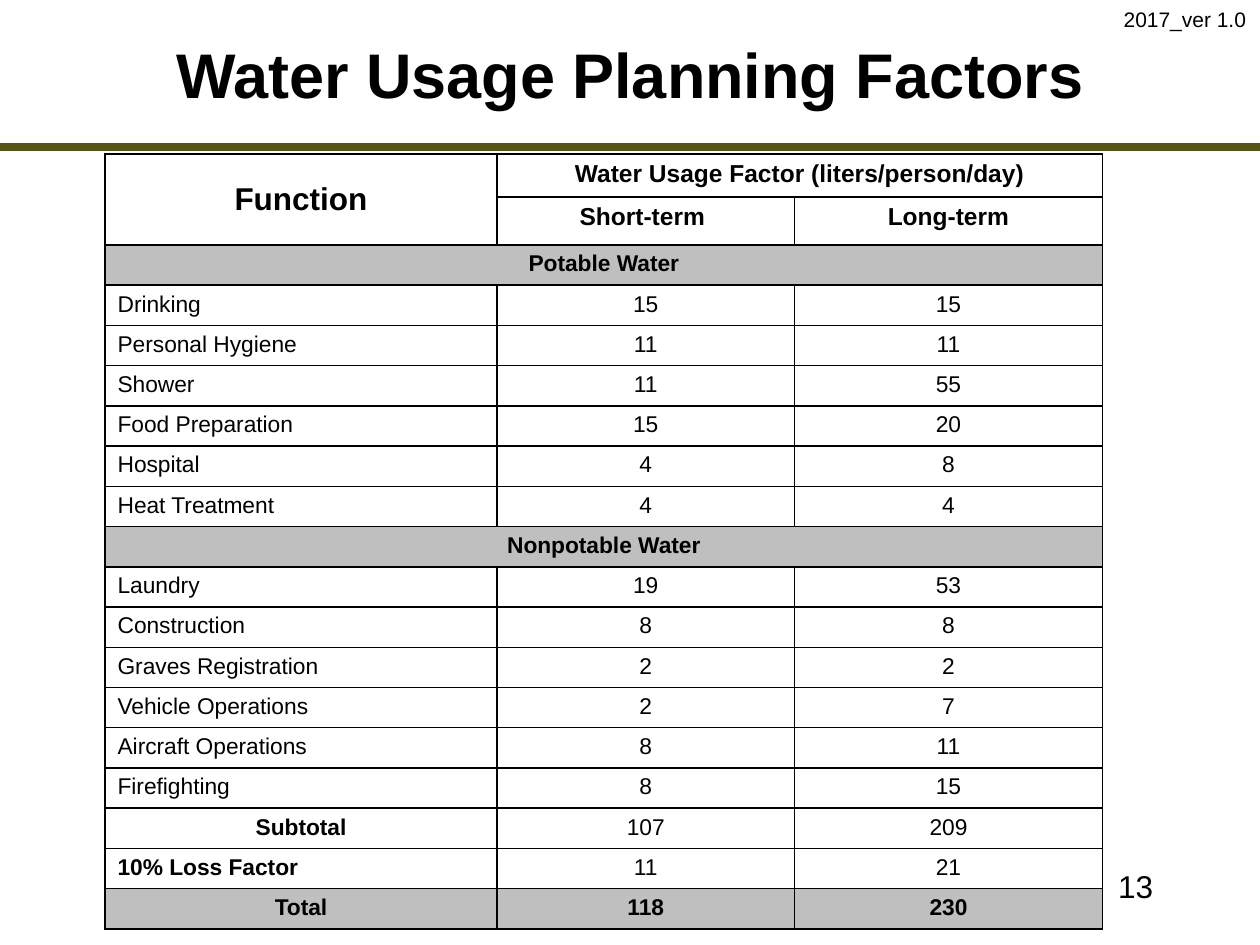
from lxml import etree
from pptx import Presentation
from pptx.dml.color import RGBColor
from pptx.enum import shapes, text
from pptx.oxml.ns import qn
from pptx.util import Pt

FONT = "Arial"
COLORS = {"ink": "000000", "rule": "545612", "band": "BFBFBF", "paper": "FFFFFF"}
LEFT, CENTER, RIGHT = text.PP_ALIGN.LEFT, text.PP_ALIGN.CENTER, text.PP_ALIGN.RIGHT
TOP, MIDDLE = text.MSO_ANCHOR.TOP, text.MSO_ANCHOR.MIDDLE

TITLE = "Water Usage Planning Factors"
VERSION = "2017_ver 1.0"
PAGE = "13"
FUNCTION = "Function"
FACTOR = "Water Usage Factor (liters/person/day)"
TERMS = ["Short-term ", "Long-term"]
SECTIONS = {
    "Potable Water": [
        ("Drinking", 15, 15),
        ("Personal Hygiene", 11, 11),
        ("Shower", 11, 55),
        ("Food Preparation", 15, 20),
        ("Hospital", 4, 8),
        ("Heat Treatment", 4, 4),
    ],
    "Nonpotable Water": [
        ("Laundry", 19, 53),
        ("Construction", 8, 8),
        ("Graves Registration", 2, 2),
        ("Vehicle Operations", 2, 7),
        ("Aircraft Operations", 8, 11),
        ("Firefighting", 8, 15),
    ],
}
SUBTOTAL = ("Subtotal", 107, 209)
LOSS = ("10% Loss Factor", 11, 21)
TOTAL = ("Total", 118, 230)

TABLE_LEFT, TABLE_TOP = 60, 88
COLUMN_WIDTHS = [224, 170, 176]
HEADER_HEIGHTS = [24.5, 27.5]
ROW_HEIGHT = 23


def color(name):
    return RGBColor.from_string(COLORS[name])


def write(frame, words, size, align, bold=False):
    paragraph = frame.paragraphs[0]
    paragraph.text = str(words)
    paragraph.alignment = align
    font = paragraph.font
    font.name, font.size, font.bold = FONT, Pt(size), bold
    font.color.rgb = color("ink")


def add_label(slide, box, words, size, align, bold=False, anchor=TOP, wrap=True):
    frame = slide.shapes.add_textbox(*map(Pt, box)).text_frame
    frame.word_wrap = wrap
    frame.vertical_anchor = anchor
    write(frame, words, size, align, bold)


def add_borders(cell):
    properties = cell._tc.get_or_add_tcPr()
    for index, side in enumerate(("a:lnL", "a:lnR", "a:lnT", "a:lnB")):
        line = etree.Element(qn(side), w=str(Pt(1)))
        fill = etree.SubElement(line, qn("a:solidFill"))
        etree.SubElement(fill, qn("a:srgbClr"), val=COLORS["ink"])
        properties.insert(index, line)


def fill_row(table, row, values, label_align=LEFT, label_bold=False, value_bold=False):
    for column, value in enumerate(values):
        align, bold = (CENTER, value_bold) if column else (label_align, label_bold)
        write(table.cell(row, column).text_frame, value, 13, align, bold)


def shade(table, row):
    for cell in table.rows[row].cells:
        cell.fill.fore_color.rgb = color("band")


def add_factors_table(slide):
    item_rows = sum(1 + len(items) for items in SECTIONS.values()) + 3
    heights = HEADER_HEIGHTS + [ROW_HEIGHT] * item_rows
    box = (TABLE_LEFT, TABLE_TOP, sum(COLUMN_WIDTHS), sum(heights))
    table = slide.shapes.add_table(
        len(heights), len(COLUMN_WIDTHS), *map(Pt, box)).table
    for column, width in zip(table.columns, COLUMN_WIDTHS):
        column.width = Pt(width)
    for row, height in zip(table.rows, heights):
        row.height = Pt(height)
    for cell in table.iter_cells():
        cell.fill.solid()
        cell.fill.fore_color.rgb = color("paper")
        add_borders(cell)

    function = table.cell(0, 0)
    function.merge(table.cell(1, 0))
    function.vertical_anchor = MIDDLE
    write(function.text_frame, FUNCTION, 18, CENTER, True)
    table.cell(0, 1).merge(table.cell(0, 2))
    write(table.cell(0, 1).text_frame, FACTOR, 14, CENTER, True)
    for column, term in enumerate(TERMS, 1):
        write(table.cell(1, column).text_frame, term, 14, CENTER, True)

    row = len(HEADER_HEIGHTS)
    for section, items in SECTIONS.items():
        shade(table, row)
        table.cell(row, 0).merge(table.cell(row, 2))
        write(table.cell(row, 0).text_frame, section, 13, CENTER, True)
        for row, item in enumerate(items, row + 1):
            fill_row(table, row, item)
        row += 1
    fill_row(table, row, SUBTOTAL, CENTER, True)
    fill_row(table, row + 1, LOSS, LEFT, True)
    fill_row(table, row + 2, TOTAL, CENTER, True, True)
    shade(table, row + 2)


def main():
    deck = Presentation()
    deck.slide_width, deck.slide_height = Pt(720), Pt(540)
    slide = deck.slides.add_slide(deck.slide_layouts[6])

    rule = slide.shapes.add_connector(
        shapes.MSO_CONNECTOR.STRAIGHT, Pt(0), Pt(84), Pt(720), Pt(84))
    rule.line.color.rgb = color("rule")
    rule.line.width = Pt(4.5)
    etree.SubElement(rule._element.spPr, qn("a:effectLst"))

    add_factors_table(slide)
    add_label(slide, (84, 12, 552, 60), TITLE, 36, CENTER, True, MIDDLE)
    add_label(slide, (516, 492, 150, 36), PAGE, 18, RIGHT)
    add_label(slide, (635, 0, 85, 21.6), VERSION, 12, LEFT, wrap=False)
    deck.save("out.pptx")


if __name__ == "__main__":
    main()
